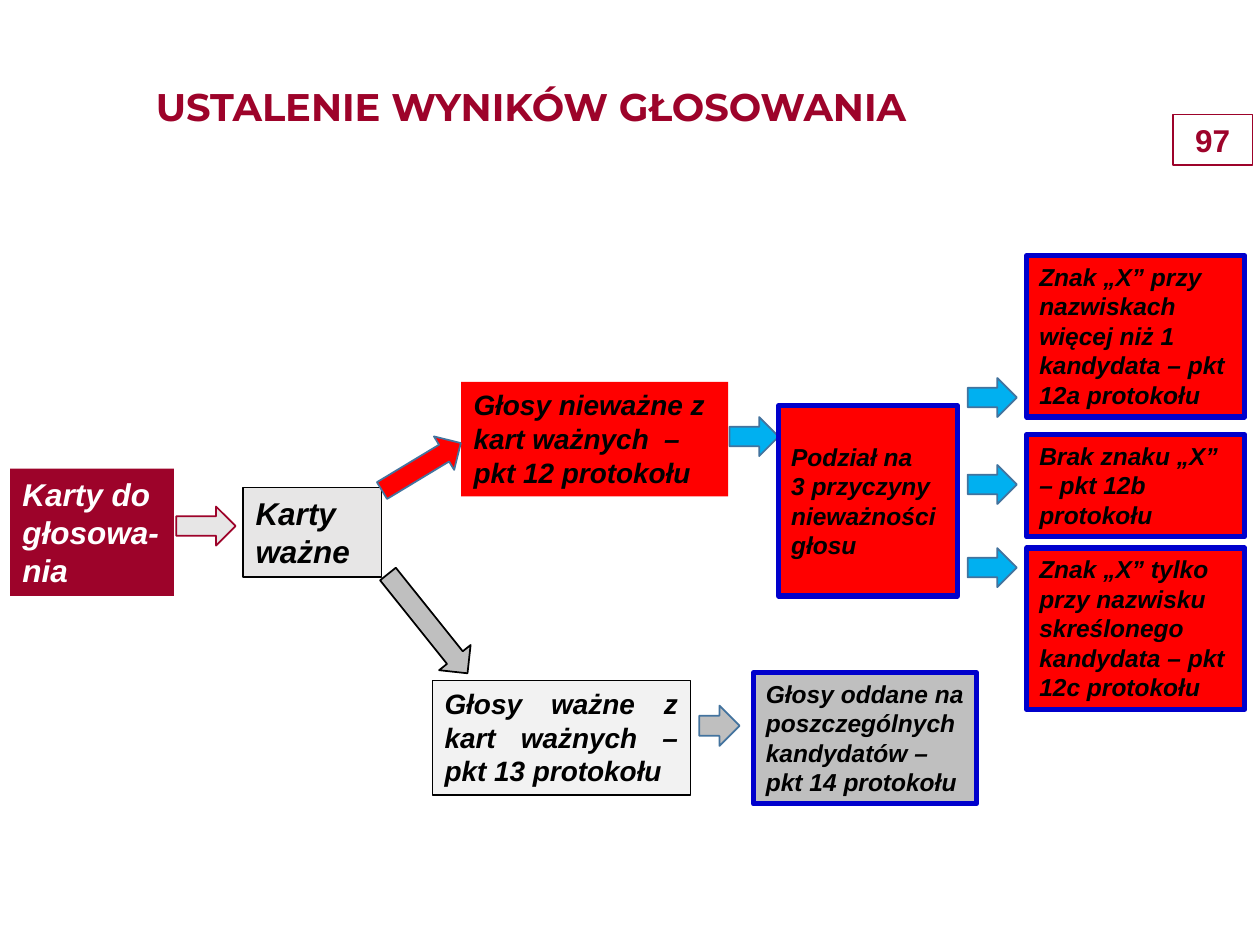
import pptx
import pptx.dml.color
import pptx.enum.shapes
import pptx.enum.text
import pptx.util
from pptx.util import Inches

MAROON, RED, BLACK, WHITE = "9D032A", "FF0000", "000000", "FFFFFF"
LIGHT_GRAY, PALE_GRAY, GRAY = "E7E6E6", "F2F2F2", "BFBFBF"
NAVY, STEEL, SKY = "0000CC", "43739E", "00B0F0"

SHAPES = pptx.enum.shapes.MSO_SHAPE
ALIGN = pptx.enum.text.PP_ALIGN
ANCHOR = pptx.enum.text.MSO_ANCHOR


def color(hex_string):
    return pptx.dml.color.RGBColor.from_string(hex_string)


def write_text(shape, text, size=14, font="Arial", font_color=BLACK, italic=True,
               align=ALIGN.LEFT, anchor=ANCHOR.TOP):
    """Fill the shape with bold text; a vertical tab breaks the line."""
    frame = shape.text_frame
    frame.word_wrap = True
    frame.vertical_anchor = anchor
    frame.text = text
    for paragraph in frame.paragraphs:
        paragraph.alignment = align
        for run in paragraph.runs:
            run.font.name = font
            run.font.size = pptx.util.Pt(size)
            run.font.bold = True
            run.font.italic = italic
            run.font.color.rgb = color(font_color)


def add_shape(slide, kind, position, fill=None, line=None, line_width=1):
    shape = slide.shapes.add_shape(kind, *map(Inches, position))
    shape.shadow.inherit = False
    if fill:
        shape.fill.solid()
        shape.fill.fore_color.rgb = color(fill)
    else:
        shape.fill.background()
    if line:
        shape.line.color.rgb = color(line)
        shape.line.width = pptx.util.Pt(line_width)
    else:
        shape.line.fill.background()
    return shape


def add_box(slide, text, position, fill=None, line=None, line_width=0.75, **text_format):
    box = add_shape(slide, SHAPES.RECTANGLE, position, fill, line, line_width)
    write_text(box, text, **text_format)


def add_arrow(slide, position, fill, line=STEEL, rotation=0):
    arrow = add_shape(slide, SHAPES.RIGHT_ARROW, position, fill, line)
    arrow.rotation = rotation


def add_title(slide, text):
    title = slide.shapes.title
    title.left, title.top, title.width, title.height = map(Inches, (0.04, 0.61, 8.35, 0.54))
    write_text(title, text, size=22, font="Montserrat", font_color=MAROON,
               italic=False, align=ALIGN.CENTER)


def add_ballots(slide):
    add_box(slide, "Karty do głosowa-nia", (0.08, 3.72, 1.3, 1.01), MAROON,
            size=18, font_color=WHITE)
    add_arrow(slide, (1.4, 4.02, 0.47, 0.31), LIGHT_GRAY, MAROON)
    add_box(slide, "Karty ważne", (1.93, 3.87, 1.1, 0.71), LIGHT_GRAY, BLACK, size=18)


def add_invalid_votes(slide):
    add_box(slide, "Głosy nieważne z kart ważnych  – pkt 12 protokołu",
            (3.66, 3.03, 2.12, 0.91), RED, size=16)
    add_arrow(slide, (2.98, 3.55, 0.73, 0.31), RED, rotation=328.9)
    add_arrow(slide, (5.79, 3.31, 0.39, 0.31), SKY)
    add_box(slide, "Podział na \v3 przyczyny nieważności głosu", (6.18, 3.22, 1.42, 1.51),
            RED, NAVY, 3, anchor=ANCHOR.MIDDLE)

    reasons = [
        ("Znak „X” przy nazwiskach więcej niż 1 kandydata – pkt 12a protokołu", 2.03, 1.28, 3),
        ("Brak znaku „X” – pkt 12b protokołu", 3.45, 0.81, 3.69),
        ("Znak „X” tylko przy nazwisku skreślonego kandydata – pkt 12c protokołu",
         4.35, 1.28, 4.35),
    ]
    for text, top, height, arrow_top in reasons:
        add_box(slide, text, (8.15, top, 1.73, height), RED, NAVY, 3)
        add_arrow(slide, (7.68, arrow_top, 0.39, 0.31), SKY)


def add_valid_votes(slide):
    add_arrow(slide, (2.89, 4.79, 1.01, 0.32), GRAY, BLACK, rotation=51.3)
    add_box(slide, "Głosy ważne z kart ważnych – pkt 13 protokołu",
            (3.43, 5.4, 2.05, 0.91), PALE_GRAY, BLACK, size=16, align=ALIGN.JUSTIFY)
    add_arrow(slide, (5.55, 5.6, 0.32, 0.32), GRAY)
    add_box(slide, "Głosy oddane na poszczególnych kandydatów – pkt 14 protokołu",
            (5.98, 5.34, 1.77, 1.04), GRAY, NAVY, 3)


def main():
    presentation = pptx.Presentation()
    presentation.slide_width = Inches(10)
    presentation.slide_height = Inches(7.5)
    slide = presentation.slides.add_slide(presentation.slide_layouts.get_by_name("Title Only"))

    add_title(slide, "USTALENIE WYNIKÓW GŁOSOWANIA")
    add_box(slide, "97", (9.31, 0.91, 0.63, 0.4), line=MAROON, size=18,
            font_color=MAROON, italic=False, align=ALIGN.CENTER)
    add_ballots(slide)
    add_invalid_votes(slide)
    add_valid_votes(slide)
    presentation.save("out.pptx")


if __name__ == "__main__":
    main()
